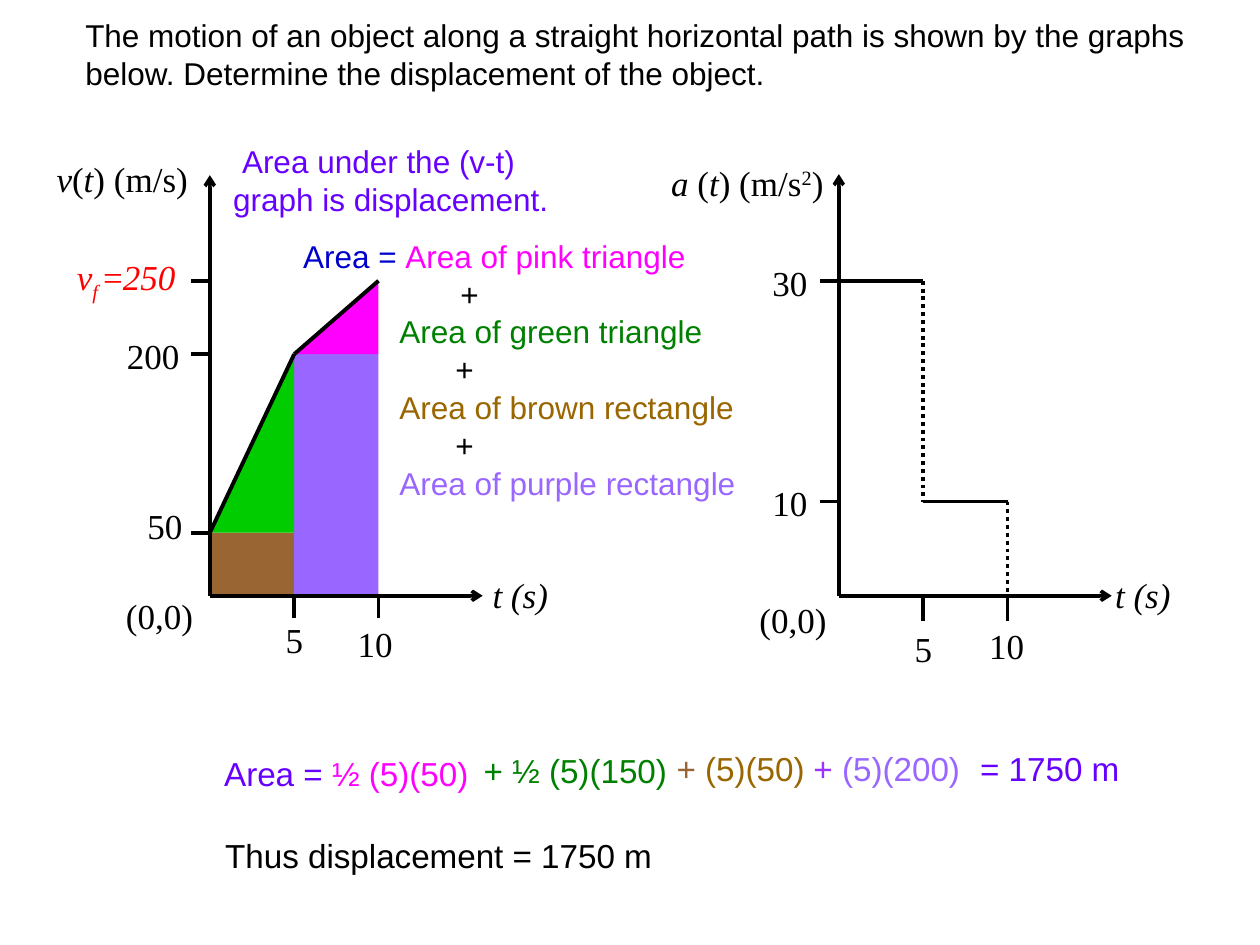
from dataclasses import dataclass
from typing import NamedTuple

from lxml import etree
from pptx import Presentation
from pptx.dml.color import RGBColor
from pptx.enum.dml import MSO_LINE
from pptx.enum.shapes import MSO_CONNECTOR, MSO_SHAPE
from pptx.enum.text import MSO_AUTO_SIZE
from pptx.oxml.ns import qn
from pptx.util import Cm, Pt

STRAIGHT = MSO_CONNECTOR.STRAIGHT
RECTANGLE = MSO_SHAPE.RECTANGLE
DOTTED = MSO_LINE.ROUND_DOT
FIT_SHAPE = MSO_AUTO_SIZE.SHAPE_TO_FIT_TEXT

COLORS = {
    "black": "000000", "red": "FF0000", "violet": "6600FF", "blue": "0000CC",
    "pink": "FF00FF", "green": "008000", "green area": "00CC00",
    "ochre": "996600", "brown": "996633", "purple": "9966FF", "plum": "9933FF",
}
GRAPH_LABEL = {"name": "Times New Roman", "size": Pt(20)}
STATEMENT = {"name": "Arial", "size": Pt(18)}
SOLUTION = {"name": "Arial", "size": Pt(19)}
LABEL_SPACING = {"line_spacing": 1.15, "space_after": Pt(10)}

BASE_Y, CM_PER_SECOND = 12.01, 0.34


class Run(NamedTuple):
    text: str
    color: str = "black"
    italic: bool = False
    baseline: int = 0


class Line(NamedTuple):
    runs: list[Run]
    margin: float = 0
    first_indent: float = 0


class Point(NamedTuple):
    x: float
    y: float


@dataclass
class Text:
    left: float
    top: float
    width: float
    height: float
    lines: list[Line]
    wrap: bool = True


@dataclass
class Graph:
    origin_x: float
    top: float
    tick_bottom: float
    levels: dict[int, float]

    def point(self, seconds: float, value: int) -> Point:
        """Return the slide position of a time and a value."""
        return Point(self.origin_x + seconds * CM_PER_SECOND, self.levels[value])


def draw_text(slide, text: Text, font_format: dict, spacing: dict) -> None:
    """Draw a text box with its lines and runs."""
    box = slide.shapes.add_textbox(*map(Cm, (text.left, text.top, text.width, text.height)))
    frame = box.text_frame
    frame.word_wrap = text.wrap
    if not spacing:
        frame.auto_size = FIT_SHAPE
    for index, line in enumerate(text.lines):
        paragraph = frame.add_paragraph() if index else frame.paragraphs[0]
        for name, value in spacing.items():
            setattr(paragraph, name, value)
        properties = paragraph._p.get_or_add_pPr()
        properties.set("marL", str(Cm(line.margin)))
        properties.set("indent", str(Cm(line.first_indent)))
        for part in line.runs:
            run = paragraph.add_run()
            run.text = part.text
            for name, value in {**font_format, "italic": part.italic}.items():
                setattr(run.font, name, value)
            run.font.color.rgb = RGBColor.from_string(COLORS[part.color])
            if part.baseline:
                run._r.get_or_add_rPr().set("baseline", str(part.baseline * 1000))


def draw_line(slide, start: Point, end: Point, width: float = 2.25,
              dotted: bool = False, arrow: bool = False) -> None:
    """Draw a straight black line, dotted or with an arrowhead if asked."""
    line = slide.shapes.add_connector(STRAIGHT, *map(Cm, (*start, *end)))
    line.line.color.rgb = RGBColor.from_string(COLORS["black"])
    line.line.width = Pt(width)
    if dotted:
        line.line.dash_style = DOTTED
    if arrow:
        etree.SubElement(line.line._get_or_add_ln(), qn("a:tailEnd"), type="arrow")
    etree.SubElement(line._element.spPr, qn("a:effectLst"))


def paint(shape, color: str) -> None:
    """Give an area a plain fill."""
    shape.fill.solid()
    shape.fill.fore_color.rgb = RGBColor.from_string(COLORS[color])
    shape.line.fill.background()
    shape.shadow.inherit = False


def draw_rectangle(slide, top_left: Point, bottom_right: Point, color: str) -> None:
    """Draw a rectangular area under the curve."""
    size = (bottom_right.x - top_left.x, bottom_right.y - top_left.y)
    paint(slide.shapes.add_shape(RECTANGLE, *map(Cm, (*top_left, *size))), color)


def draw_triangle(slide, low: Point, high: Point, color: str) -> None:
    """Draw the right triangle below a rising segment."""
    corners = [(Cm(x), Cm(y)) for x, y in (low, high, (high.x, low.y))]
    builder = slide.shapes.build_freeform(*corners[0])
    builder.add_line_segments(corners[1:], close=True)
    paint(builder.convert_to_shape(), color)


def draw_axes(slide, graph: Graph) -> None:
    """Draw both axes and their ticks."""
    origin = graph.point(0, 0)
    for end in (Point(origin.x, graph.top), Point(origin.x + 5.5, BASE_Y)):
        draw_line(slide, origin, end, width=2, arrow=True)
    for seconds in (5, 10):
        tick = graph.point(seconds, 0)
        draw_line(slide, tick, Point(tick.x, graph.tick_bottom))
    for value in graph.levels:
        if value:
            level = graph.point(0, value)
            draw_line(slide, Point(level.x - 0.38, level.y), level)


def label(left: float, top: float, width: float, height: float, *runs: Run) -> Text:
    """Return a one-line text."""
    return Text(left, top, width, height, [Line(list(runs))])


def upright(left: float, top: float, text: str, width: float = 1.6) -> Text:
    """Return an upright axis label."""
    return label(left, top, width, 1.4, Run(text))


def term(left: float, top: float, width: float, *runs: Run) -> Text:
    """Return one unwrapped term of the solution."""
    return Text(left, top, width, 1.07, [Line(list(runs))], wrap=False)


VELOCITY = Graph(4.23, 3.53, 12.45, {0: BASE_Y, 50: 10.74, 200: 7.14, 250: 5.66})
ACCELERATION = Graph(16.91, 3.51, 12.52, {0: BASE_Y, 10: 10.11, 30: 5.66})
TIME = Run("t (s)", italic=True)
PLUS = [Run("+")]

GRAPH_LABELS = [
    label(0.89, 2.92, 3.76, 1.07, Run("v", italic=True), Run("("),
          Run("t", italic=True), Run(") (m/s)")),
    label(13.28, 3, 4.06, 1.4, Run("a ", italic=True), Run("("), Run("t", italic=True),
          Run(") (m/s"), Run("2", baseline=30), Run(")")),
    label(9.68, 11.3, 1.98, 1.55, TIME),
    label(22.23, 11.3, 1.91, 1.55, TIME),
    upright(2.29, 11.73, "(0,0)", 2.2), upright(15.06, 11.81, "(0,0)", 2.2),
    upright(5.51, 12.22, "5"), upright(6.96, 12.29, "10"),
    upright(18.19, 12.4, "5"), upright(19.69, 12.34, "10"),
    upright(2.72, 9.91, "50"), upright(2.31, 6.5, "200", 1.9),
    upright(15.32, 9.45, "10"), upright(15.32, 5.03, "30"),
]
FINAL_VELOCITY = term(1.3, 5.03, 2.72, Run("v", "red", True), Run("f ", "red", True, -25),
                      Run("=", "red"), Run("250", "red", True))
STATEMENTS = [
    label(1.47, 0.2, 23.06, 1.8, Run(
        "The motion of an object along a straight horizontal path is shown by the graphs "
        "below. Determine the displacement of the object.")),
    Text(4.45, 2.74, 7.67, 1.8, [Line(
        [Run("Area under the (v-t) graph is displacement.", "violet")], first_indent=0.18)]),
    Text(5.51, 4.65, 10.16, 6.4, [
        Line([Run("Area = ", "blue"), Run("Area of pink triangle", "pink")], 0.35),
        Line(PLUS, 3.52),
        Line([Run("Area of green triangle", "green")], 2.29),
        Line(PLUS, 3.42),
        Line([Run("Area of brown rectangle", "ochre")], 2.29),
        Line(PLUS, 3.42),
        Line([Run("Area of purple rectangle", "purple")], 2.29),
    ]),
]
SOLUTION_TEXTS = [
    label(4.27, 15.06, 6.17, 1.07, Run("Area = ", "violet"), Run("½ (5)(50)", "pink")),
    term(9.5, 15.01, 4.27, Run("+ ½ (5)(150)", "green")),
    term(13.39, 14.96, 3.15, Run("+ ", "brown"), Run("(5)(50)", "ochre")),
    term(16.15, 14.96, 3.53, Run("+ ", "plum"), Run("(5)(200)", "purple")),
    term(19.51, 14.96, 3.35, Run("= 1750 m", "violet")),
    label(4.29, 16.71, 12.7, 1.07, Run("Thus displacement = 1750 m")),
]


def main() -> None:
    """Build the displacement slide."""
    deck = Presentation()
    deck.slide_width, deck.slide_height = Cm(25.4), Cm(19.05)
    slide = deck.slides.add_slide(deck.slide_layouts[6])

    v, a = VELOCITY.point, ACCELERATION.point
    draw_rectangle(slide, v(0, 50), v(5, 0), "brown")
    draw_rectangle(slide, v(5, 200), v(10, 0), "purple")
    for low, high, color in ((v(0, 50), v(5, 200), "green area"),
                             (v(5, 200), v(10, 250), "pink")):
        draw_triangle(slide, low, high, color)
        draw_line(slide, low, high)
    for start, end, value, next_value in ((0, 5, 30, 10), (5, 10, 10, 0)):
        draw_line(slide, a(start, value), a(end, value))
        draw_line(slide, a(end, value), a(end, next_value), dotted=True)
    for graph in (VELOCITY, ACCELERATION):
        draw_axes(slide, graph)

    for texts, font_format, spacing in (
            (GRAPH_LABELS, GRAPH_LABEL, LABEL_SPACING), ([FINAL_VELOCITY], GRAPH_LABEL, {}),
            (STATEMENTS, STATEMENT, {}), (SOLUTION_TEXTS, SOLUTION, {})):
        for text in texts:
            draw_text(slide, text, font_format, spacing)
    deck.save("out.pptx")


if __name__ == "__main__":
    main()
